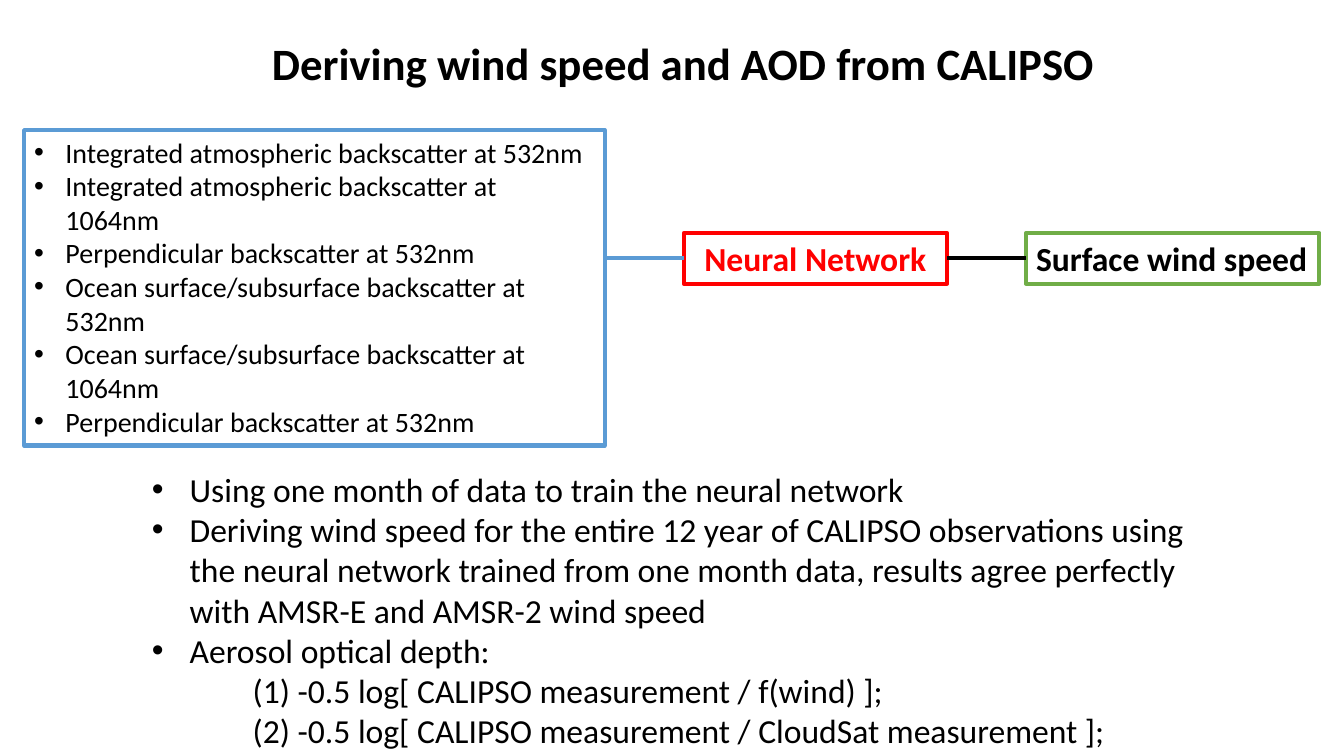
from dataclasses import dataclass

from lxml.etree import SubElement
from pptx import Presentation
from pptx.dml.color import RGBColor
from pptx.enum.shapes import MSO_CONNECTOR, MSO_SHAPE
from pptx.enum.text import MSO_ANCHOR, PP_ALIGN
from pptx.oxml.ns import qn
from pptx.util import Cm, Pt


@dataclass(frozen=True)
class Theme:
    font: str = "Calibri"
    text: str = "000000"
    inputs: str = "5B9BD5"
    network: str = "FF0000"
    output: str = "70AD47"
    title_size: int = 32
    body_size: int = 24
    input_size: int = 20
    line_width: int = 3


THEME = Theme()

INPUTS = [
    "Integrated atmospheric backscatter at 532nm",
    "Integrated atmospheric backscatter at 1064nm",
    "Perpendicular backscatter at 532nm",
    "Ocean surface/subsurface backscatter at 532nm",
    "Ocean surface/subsurface backscatter at 1064nm",
    "Perpendicular backscatter at 532nm",
]
NOTES = [
    "Using one month of data to train the neural network",
    "Deriving wind speed for the entire 12 year of CALIPSO observations using "
    "the neural network trained from one month data, results agree perfectly "
    "with AMSR-E and AMSR-2 wind speed",
    "Aerosol optical depth:",
]
FORMULAS = [
    "(1) -0.5 log[ CALIPSO measurement / f(wind) ];",
    "(2) -0.5 log[ CALIPSO measurement / CloudSat measurement ];",
]


def write(p, text, size, color=THEME.text, bold=False, align=PP_ALIGN.LEFT):
    p.alignment = align
    r = p.add_run()
    r.text = text
    r.font.name = THEME.font
    r.font.size = Pt(size)
    r.font.bold = bold
    r.font.color.rgb = RGBColor.from_string(color)


def indent(p, left, hanging=0):
    """Indent a paragraph; a hanging indent gets a bullet."""
    pPr = p._p.get_or_add_pPr()
    pPr.set("marL", str(Cm(left)))
    pPr.set("indent", str(-Cm(hanging)))
    if hanging:
        SubElement(pPr, qn("a:buFont"), typeface="Arial")
        SubElement(pPr, qn("a:buChar"), char="•")
    else:
        SubElement(pPr, qn("a:buNone"))


def next_paragraph(tf):
    first = tf.paragraphs[0]
    return tf.add_paragraph() if first.runs else first


def add_bullets(tf, items, size, hanging):
    for item in items:
        p = next_paragraph(tf)
        indent(p, hanging, hanging)
        write(p, item, size)


def add_frame(s, box, color):
    sp = s.shapes.add_shape(MSO_SHAPE.RECTANGLE, *map(Cm, box))
    sp.shadow.inherit = False
    sp.fill.background()
    sp.line.color.rgb = RGBColor.from_string(color)
    sp.line.width = Pt(THEME.line_width)
    sp.text_frame.word_wrap = True
    return sp


def add_label(s, box, text, line, color, align):
    tf = add_frame(s, box, line).text_frame
    tf.word_wrap = False
    tf.vertical_anchor = MSO_ANCHOR.TOP
    write(tf.paragraphs[0], text, THEME.body_size, color, True, align)


def add_link(s, x1, x2, y, color):
    line = s.shapes.add_connector(MSO_CONNECTOR.STRAIGHT, Cm(x1), Cm(y), Cm(x2), Cm(y))
    line.line.color.rgb = RGBColor.from_string(color)
    line.line.width = Pt(THEME.line_width)
    SubElement(line._element.spPr, qn("a:effectLst"))


def add_title(s, box, text):
    tf = s.shapes.add_textbox(*map(Cm, box)).text_frame
    tf.word_wrap = True
    tf.vertical_anchor = MSO_ANCHOR.MIDDLE
    p = tf.paragraphs[0]
    p.line_spacing = 0.9
    write(p, text, THEME.title_size, bold=True, align=PP_ALIGN.CENTER)


def add_flow(s, box):
    """Inputs, network and output in a row, joined by two lines."""
    left, top, width, height = box
    input_w, network_w, output_w = 14.63, 6.63, 7.39
    gap = (width - input_w - network_w - output_w) / 2
    input_end = left + input_w
    network_x = input_end + gap
    network_end = network_x + network_w
    output_x = network_end + gap
    label_y, label_h = top + 2.59, 1.28
    link_y = label_y + label_h / 2

    # Input measurements
    tf = add_frame(s, (left, top, input_w, height), THEME.inputs).text_frame
    tf.vertical_anchor = MSO_ANCHOR.TOP
    add_bullets(tf, INPUTS, THEME.input_size, 0.79)

    # Network and output
    add_label(s, (network_x, label_y, network_w, label_h), "Neural Network",
              THEME.network, THEME.network, PP_ALIGN.CENTER)
    add_label(s, (output_x, label_y, output_w, label_h), "Surface wind speed",
              THEME.output, THEME.text, PP_ALIGN.LEFT)

    # Links
    add_link(s, input_end, network_x, link_y, THEME.inputs)
    add_link(s, network_end, output_x, link_y, THEME.text)


def add_notes(s, box):
    tf = s.shapes.add_textbox(*map(Cm, box)).text_frame
    tf.word_wrap = True
    add_bullets(tf, NOTES, THEME.body_size, 0.95)
    for formula in FORMULAS:
        p = next_paragraph(tf)
        p.level = 2
        indent(p, 2.54)
        write(p, formula, THEME.body_size)


def main():
    prs = Presentation()
    prs.slide_width, prs.slide_height = Cm(33.87), Cm(19.05)
    s = prs.slides.add_slide(prs.slide_layouts[6])
    add_title(s, (1.04, 0.46, 32.36, 2.39), "Deriving wind speed and AOD from CALIPSO")
    add_flow(s, (0.61, 3.28, 32.64, 7.95))
    add_notes(s, (3.58, 11.68, 27.79, 7.44))
    prs.save("out.pptx")


if __name__ == "__main__":
    main()
